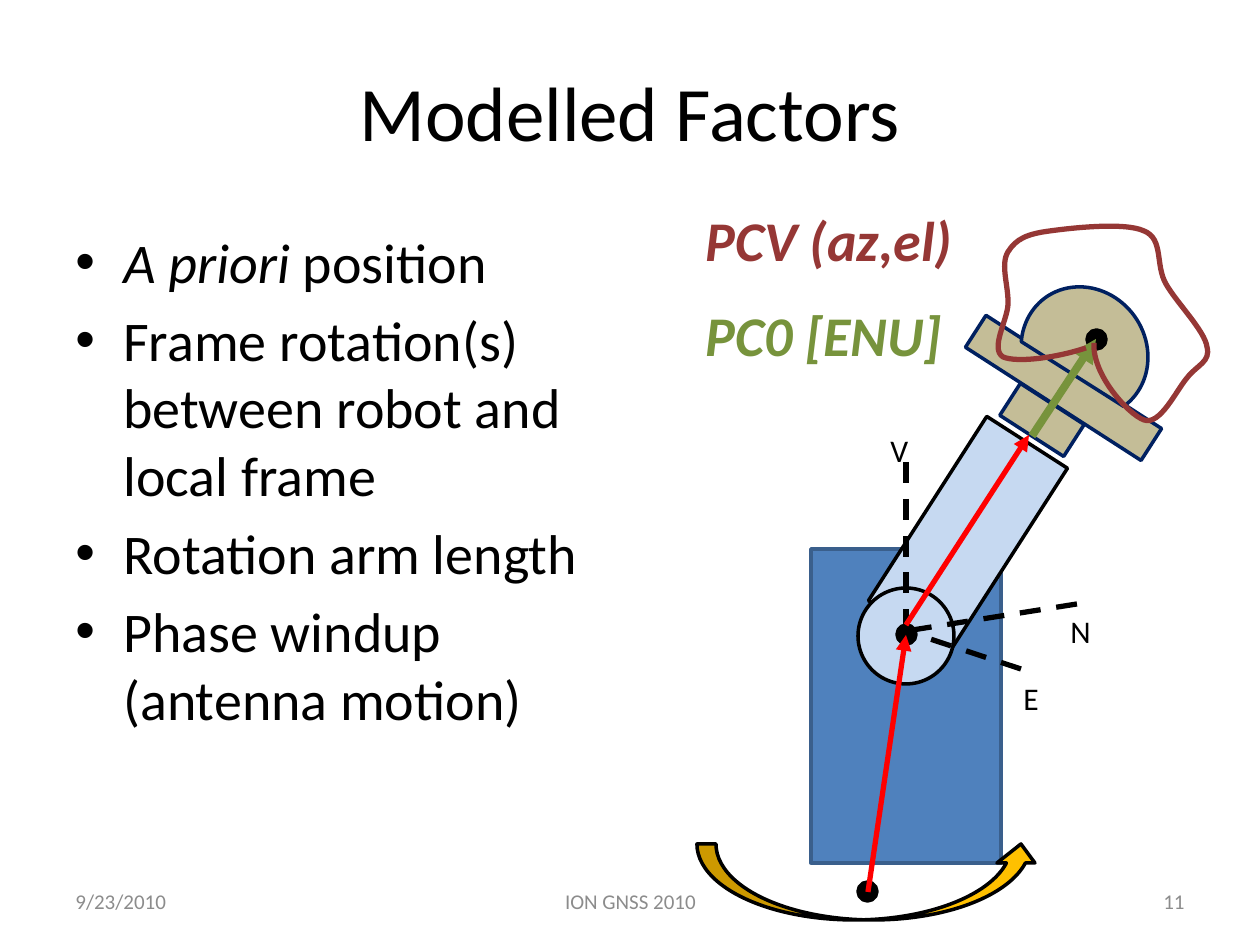
from lxml import etree
from pptx import Presentation
from pptx import util as u
from pptx.dml.color import RGBColor
from pptx.enum import dml, shapes, text
from pptx.oxml import ns

SCALE = u.Inches(1) / 126  # EMU per px

BLACK = RGBColor(0x00, 0x00, 0x00)
GREY = RGBColor(0x8C, 0x8C, 0x8C)
BASE_BLUE = RGBColor(0x4F, 0x81, 0xBD)
BASE_EDGE = RGBColor(0x3A, 0x5F, 0x8C)
ARM_BLUE = RGBColor(0xC6, 0xD9, 0xF1)
ANTENNA_TAN = RGBColor(0xC4, 0xBD, 0x97)
NAVY = RGBColor(0x00, 0x20, 0x60)
GOLD = RGBColor(0xFF, 0xC0, 0x00)
RED = RGBColor(0xFF, 0x00, 0x00)
GREEN = RGBColor(0x77, 0x93, 0x3C)
MAROON = RGBColor(0x95, 0x37, 0x35)

SHAPE = shapes.MSO_SHAPE
ALIGN = text.PP_ALIGN
MIDDLE = text.MSO_ANCHOR.MIDDLE

BULLETS = [
    [("A priori", True), (" position", False)],
    [("Frame rotation(s) between robot and local frame", False)],
    [("Rotation arm length", False)],
    [("Phase windup (antenna motion)", False)],
]

# Phase centre variation: start point, then two controls and an end per curve
PCV_START = (1086, 348)
PCV_CURVES = [
    (1056, 358), (1017, 363), (1003, 357),
    (990, 349), (1007, 321), (1008, 305),
    (1009, 287), (1000, 265), (1008, 252),
    (1016, 239), (1027, 234), (1050, 231),
    (1072, 228), (1125, 222), (1144, 231),
    (1164, 239), (1155, 265), (1166, 284),
    (1176, 302), (1205, 331), (1207, 347),
    (1211, 362), (1197, 365), (1187, 378),
    (1176, 391), (1160, 426), (1144, 420),
    (1129, 415), (1092, 375), (1094, 343),
]


def px(*lengths):
    return [u.Emu(round(length * SCALE)) for length in lengths]


def add_part(slide, kind, box, fill, edge=BLACK, rotation=0):
    part = slide.shapes.add_shape(kind, *px(*box))
    part.shadow.inherit = False
    part.rotation = rotation
    part.fill.solid()
    part.fill.fore_color.rgb = fill
    part.line.color.rgb = edge
    part.line.width = u.Pt(2)


def add_dot(slide, left, top):
    add_part(slide, SHAPE.OVAL, (left, top, 19, 19), BLACK)


def add_line(slide, start, end, color, width=3, dashed=False):
    """Draw a dashed axis, or a solid vector with an arrowhead at its end."""
    line = slide.shapes.add_connector(
        shapes.MSO_CONNECTOR.STRAIGHT, *px(*start, *end))
    line.line.color.rgb = color
    line.line.width = u.Pt(width)
    if dashed:
        line.line.dash_style = dml.MSO_LINE.DASH
    else:
        etree.SubElement(line.line._get_or_add_ln(), ns.qn("a:tailEnd"),
                         type="triangle")
    etree.SubElement(line._element.spPr, ns.qn("a:effectLst"))


def style_font(font, size, color):
    font.name = "Calibri"
    font.size = u.Pt(size)
    font.color.rgb = color


def add_text(slide, box, words, size, color=BLACK, align=ALIGN.LEFT,
             anchor=text.MSO_ANCHOR.TOP, emphasis=False):
    frame = slide.shapes.add_textbox(*px(*box)).text_frame
    frame.word_wrap = True
    frame.vertical_anchor = anchor
    paragraph = frame.paragraphs[0]
    paragraph.text = words
    paragraph.alignment = align
    style_font(paragraph.font, size, color)
    if emphasis:
        paragraph.font.bold = paragraph.font.italic = True
    return paragraph


def add_bullets(slide, box):
    frame = slide.shapes.add_textbox(*px(*box)).text_frame
    frame.word_wrap = True
    for index, runs in enumerate(BULLETS):
        paragraph = frame.add_paragraph() if index else frame.paragraphs[0]
        if index:
            paragraph.space_before = u.Pt(6.4)
        properties = paragraph._p.get_or_add_pPr()
        indent = u.Inches(0.38)
        properties.set("marL", str(indent))
        properties.set("indent", str(-indent))
        etree.SubElement(properties, ns.qn("a:buFont"), typeface="Arial")
        etree.SubElement(properties, ns.qn("a:buChar"), char="•")
        style_font(paragraph.font, 32, BLACK)
        for words, italic in runs:
            run = paragraph.add_run()
            run.text = words
            run.font.italic = italic


def add_curve(slide, start, points, color):
    """Build an outline through the points, then bend each three into a curve."""
    builder = slide.shapes.build_freeform(*start, scale=SCALE)
    builder.add_line_segments(points, close=False)
    outline = builder.convert_to_shape()
    outline.shadow.inherit = False
    outline.fill.background()
    outline.line.color.rgb = color
    outline.line.width = u.Pt(3)
    segments = list(outline._element.iter(ns.qn("a:lnTo")))
    for first in range(0, len(segments), 3):
        curve = etree.Element(ns.qn("a:cubicBezTo"))
        segments[first].addprevious(curve)
        for segment in segments[first:first + 3]:
            curve.append(segment[0])
            segment.getparent().remove(segment)


def draw_robot(slide):
    # Base, rotating arm and joint
    add_dot(slide, 858, 882)
    add_part(slide, SHAPE.RECTANGLE, (811, 549, 190, 314), BASE_BLUE, BASE_EDGE)
    add_part(slide, SHAPE.RECTANGLE, (920, 425, 96, 219), ARM_BLUE, rotation=32.7)
    add_part(slide, SHAPE.OVAL, (858, 588, 96, 96), ARM_BLUE)
    add_dot(slide, 897, 625)
    add_part(slide, SHAPE.CURVED_UP_ARROW, (697, 844, 343, 76), GOLD)

    # Local frame axes
    for tip, name, label in [((906, 462), "V", (878, 425)),
                             ((1077, 604), "N", (1058, 606)),
                             ((1021, 669), "E", (1011, 673))]:
        add_line(slide, tip, (906, 631), BLACK, dashed=True)
        add_text(slide, (*label, 48, 49), name, 18)


def draw_antenna(slide):
    for kind, box, rotation in [(SHAPE.RECTANGLE, (959, 369, 209, 38), 32.8),
                                (SHAPE.RECTANGLE, (1004, 401, 76, 38), 32.8),
                                (SHAPE.CHORD, (1023, 285, 123, 134), 144.3)]:
        add_part(slide, kind, box, ANTENNA_TAN, NAVY, rotation)

    # Vectors from the base to the phase centre
    add_line(slide, (868, 892), (906, 635), RED)
    add_dot(slide, 1087, 330)
    add_line(slide, (906, 625), (1029, 435), RED)
    add_line(slide, (1032, 436), (1096, 339), GREEN, width=4.5)
    add_curve(slide, PCV_START, PCV_CURVES, MAROON)

    # Phase centre labels
    for top, words, color in [(294, "PC0 [ENU]", GREEN),
                              (199, "PCV (az,el)", MAROON)]:
        add_text(slide, (693, top, 290, 79), words, 32, color, emphasis=True)


def main():
    deck = Presentation()
    deck.slide_width, deck.slide_height = px(1260, 945)
    slide = deck.slides.add_slide(deck.slide_layouts[6])

    title = add_text(slide, (63, 38, 1134, 158), "Modelled Factors", 44,
                     align=ALIGN.CENTER, anchor=MIDDLE)
    title.line_spacing = 0.87
    draw_robot(slide)
    draw_antenna(slide)
    add_bullets(slide, (63, 221, 599, 624))

    # Footer
    for left, width, words, align in [(63, 294, "9/23/2010", ALIGN.LEFT),
                                      (431, 399, "ION GNSS 2010", ALIGN.CENTER),
                                      (903, 294, "11", ALIGN.RIGHT)]:
        add_text(slide, (left, 876, width, 50), words, 12, GREY, align, MIDDLE)

    deck.save("out.pptx")


if __name__ == "__main__":
    main()
